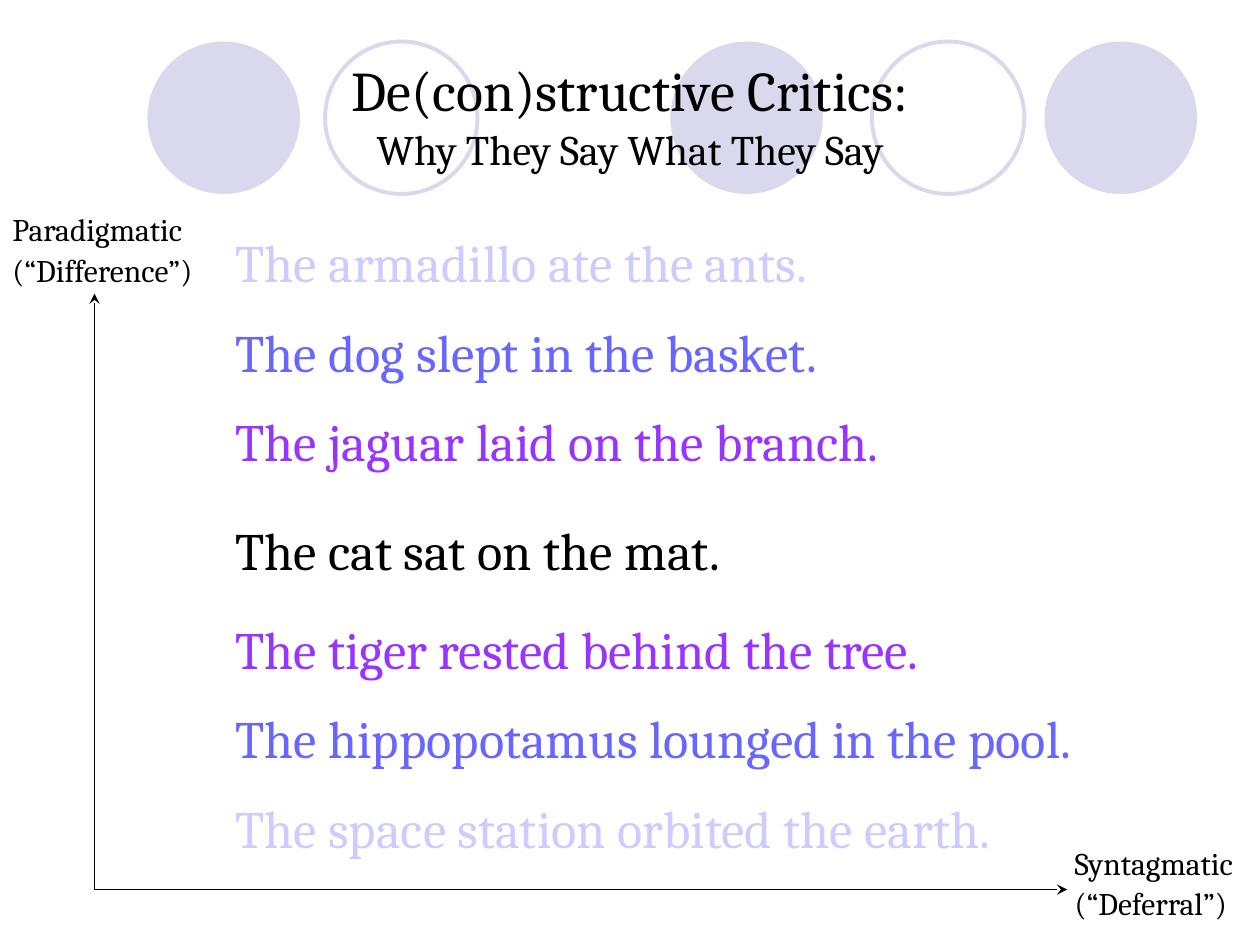
from copy import deepcopy
from dataclasses import dataclass

from lxml.etree import SubElement
from pptx import Presentation
from pptx.dml.color import RGBColor
from pptx.enum.shapes import MSO_CONNECTOR, MSO_SHAPE
from pptx.enum.text import MSO_ANCHOR, MSO_AUTO_SIZE, PP_ALIGN
from pptx.oxml.ns import qn
from pptx.util import Inches, Pt


@dataclass(frozen=True)
class Theme:
    """Colours, font and type sizes."""
    font: str = "Cambria"
    ink: str = "000000"
    near: str = "9933FF"
    middle: str = "6767FF"
    far: str = "CCCCFF"
    circle: str = "D9D8EC"
    title: int = 32
    subtitle: int = 24
    sentence: int = 30
    label: int = 18


def add_text(p, text, *, font, size, color):
    """Add a formatted run to a paragraph."""
    r = p.add_run()
    r.text = text
    r.font.name = font
    r.font.size = Pt(size)
    r.font.color.rgb = RGBColor.from_string(color)
    return r


def space_before_percent(p, percent):
    """Set paragraph spacing relative to the text size."""
    p.space_before = Pt(0)
    spacing = p._p.pPr.find(qn("a:spcBef"))
    spacing.clear()
    SubElement(spacing, qn("a:spcPct"), val=str(percent * 1000))


class SlideBuilder:
    """Draw elements on a grid of 20 columns by 15 rows."""

    def __init__(self, prs, theme):
        """Start a title-only slide."""
        self.theme = theme
        self.cell_w, self.cell_h = prs.slide_width / 20, prs.slide_height / 15
        self.slide = prs.slides.add_slide(prs.slide_layouts[5])

    def grid(self, *lengths):
        """Turn alternating columns and rows into slide units."""
        cells = (self.cell_w, self.cell_h)
        return [round(n * cells[i % 2]) for i, n in enumerate(lengths)]

    def circle(self, col, row, size, filled):
        """Draw a filled or outlined circle."""
        sp = self.slide.shapes.add_shape(
            MSO_SHAPE.OVAL, *self.grid(col, row, size, size))
        sp.shadow.inherit = False
        color = RGBColor.from_string(self.theme.circle)
        if filled:
            sp.fill.solid()
            sp.fill.fore_color.rgb = color
            sp.line.fill.background()
        else:
            sp.fill.background()
            sp.line.color.rgb = color
            sp.line.width = Pt(2.25)

    def title(self, heading, subtitle, box):
        """Fill the title placeholder and bring it forward."""
        sp = self.slide.shapes.title
        sp.left, sp.top, sp.width, sp.height = self.grid(*box)
        self.slide.shapes._spTree.append(sp._element)
        tf = sp.text_frame
        tf.auto_size = MSO_AUTO_SIZE.NONE
        tf.vertical_anchor = MSO_ANCHOR.MIDDLE
        p = tf.paragraphs[0]
        p.alignment = PP_ALIGN.CENTER
        style = dict(font=self.theme.font, color=self.theme.ink)
        r = add_text(p, heading, size=self.theme.title, **style)
        p.add_line_break()
        p._p[-1].append(deepcopy(r._r.rPr))
        add_text(p, subtitle, size=self.theme.subtitle, **style)

    def text(self, lines, box, size, spacing=None):
        """Draw a text box from (text, colour) lines."""
        tf = self.slide.shapes.add_textbox(*self.grid(*box)).text_frame
        tf.word_wrap = True
        tf.auto_size = MSO_AUTO_SIZE.SHAPE_TO_FIT_TEXT
        for i, (line, color) in enumerate(lines):
            p = tf.add_paragraph() if i else tf.paragraphs[0]
            if i and spacing:
                p.line_spacing = spacing
            space_before_percent(p, 50)
            add_text(p, line, font=self.theme.font, size=size, color=color)

    def axis(self, start, end):
        """Draw a thin line with an arrowhead at its end."""
        cx = self.slide.shapes.add_connector(
            MSO_CONNECTOR.STRAIGHT, *self.grid(*start, *end))
        cx.line.color.rgb = RGBColor.from_string(self.theme.ink)
        cx.line.width = Pt(0.75)
        SubElement(cx.line._get_or_add_ln(), qn("a:tailEnd"), type="stealth")
        SubElement(cx._element.spPr, qn("a:effectLst"))


def main():
    """Build and save the slide."""
    prs = Presentation()
    prs.slide_width, prs.slide_height = Inches(10), Inches(7.5)
    theme = Theme()
    s = SlideBuilder(prs, theme)

    for col, filled in ((10.64, True), (16.58, True), (2.34, True),
                        (13.84, False), (5.16, False)):
        s.circle(col, 0.66, 2.42, filled)
    s.title("De(con)structive Critics:", "Why They Say What They Say",
            (1, 0.72, 18, 2.2))

    sentences = (
        (8.12, 1.2, [("The cat sat on the mat.", theme.ink)]),
        (3.56, 4.2, [("The armadillo ate the ants.", theme.far),
                     ("The dog slept in the basket.", theme.middle),
                     ("The jaguar laid on the branch.", theme.near)]),
        (9.7, 4.2, [("The tiger rested behind the tree.", theme.near),
                    ("The hippopotamus lounged in the pool.", theme.middle),
                    ("The space station orbited the earth.", theme.far)]),
    )
    for row, height, lines in sentences:
        s.text(lines, (3.54, row, 16.46, height), theme.sentence)

    origin = (1.5, 14.12)
    for end in ((1.5, 4.66), (16.94, 14.12)):
        s.axis(origin, end)

    labels = (
        ((16.86, 13.3, 3.14, 1.46), ("Syntagmatic", "(“Deferral”)")),
        ((0, 3.24, 3.7, 1.46), ("Paradigmatic", "(“Difference”)")),
    )
    for box, lines in labels:
        s.text([(line, theme.ink) for line in lines], box, theme.label, 0.6)

    prs.save("out.pptx")


if __name__ == "__main__":
    main()
